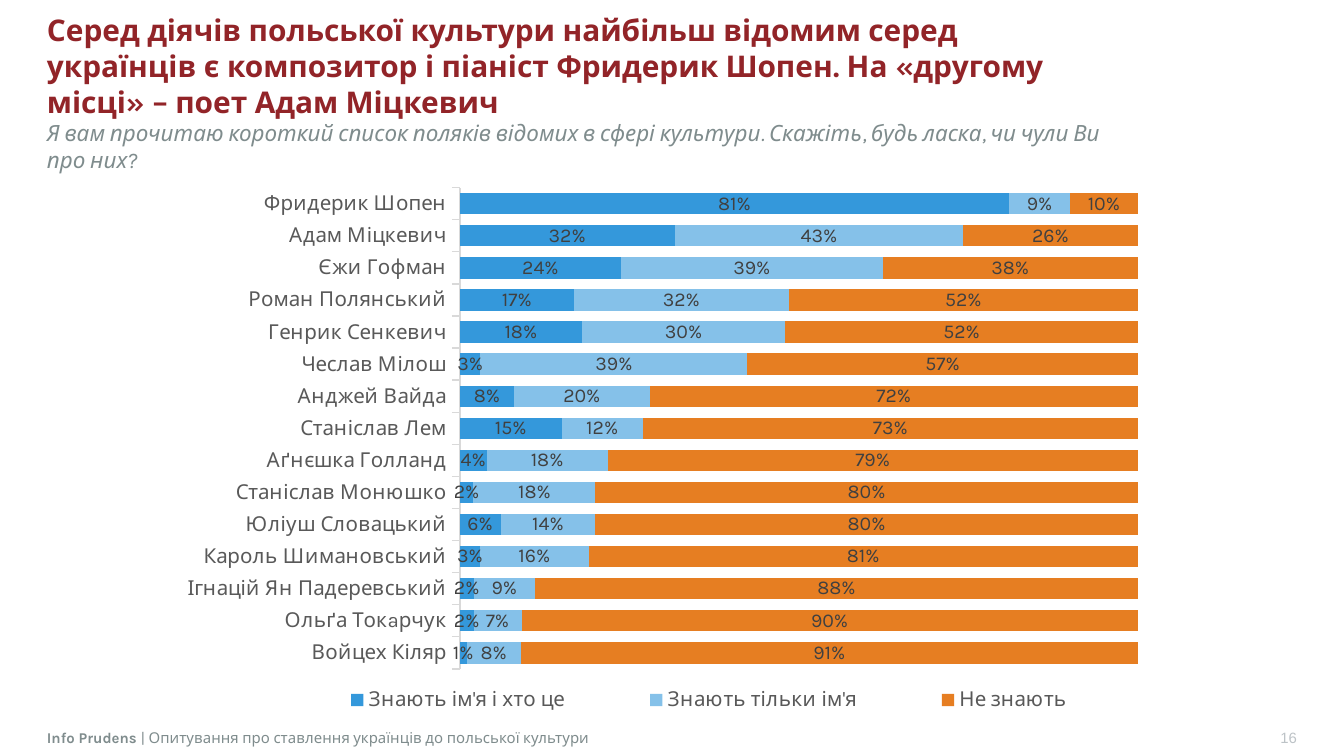
from dataclasses import dataclass

from lxml import etree
from pptx import Presentation
from pptx import util as u
from pptx.chart.data import CategoryChartData
from pptx.dml.color import RGBColor
from pptx.enum import chart as ch, shapes, text
from pptx.oxml.ns import qn


@dataclass(frozen=True)
class Theme:
    font: str = "Karla"
    number_font: str = "Arial"
    paper: str = "FFFFFF"
    heading: str = "922428"
    muted: str = "7F8C8D"
    page: str = "BDC3C7"
    axis_text: str = "595959"
    label_text: str = "404040"
    axis_line: str = "D9D9D9"
    series: tuple = ("3498DB", "85C1E9", "E67E22")
    heading_size: float = 16
    question_size: float = 12
    axis_size: float = 11
    label_size: float = 10.5
    footer_size: float = 8


SCALE = 914400 / 134.4


def px(n):
    return u.Emu(round(n * SCALE))


def style(font, size, color, name, bold=None, italic=None):
    font.size = u.Pt(size)
    font.color.rgb = RGBColor.from_string(color)
    font.name = name
    font.bold = bold
    font.italic = italic


def place(element, frame, box, target=None):
    layout = element.find(qn("c:layout"))
    if layout is None:
        layout = etree.Element(qn("c:layout"))
        before = element.find(qn("c:legendPos"))
        element.insert(0 if before is None else element.index(before) + 1, layout)
    for old in list(layout):
        layout.remove(old)
    x, y, w, h = frame
    left, top, width, height = box
    shares = ((left - x) / w, (top - y) / h, width / w, height / h)
    settings = [("layoutTarget", target)] if target else []
    settings += [("xMode", "edge"), ("yMode", "edge"), *zip("xywh", shares)]
    manual = etree.SubElement(layout, qn("c:manualLayout"))
    for tag, value in settings:
        etree.SubElement(manual, qn(f"c:{tag}")).set("val", str(value))


class Deck:
    def __init__(self, theme):
        self.theme = theme
        self.prs = Presentation()
        self.prs.slide_width, self.prs.slide_height = px(1344), px(756)
        self.s = self.prs.slides.add_slide(self.prs.slide_layouts[6])

    def first_paragraph(self, sp):
        tf = sp.text_frame
        tf.word_wrap = True
        tf.vertical_anchor = text.MSO_ANCHOR.MIDDLE
        tf.margin_left = tf.margin_right = tf.margin_top = tf.margin_bottom = 0
        return tf.paragraphs[0]

    def panel(self, *box):
        sp = self.s.shapes.add_shape(shapes.MSO_SHAPE.RECTANGLE, *map(px, box))
        sp.shadow.inherit = False
        sp.fill.solid()
        sp.fill.fore_color.rgb = RGBColor.from_string(self.theme.paper)
        sp.line.fill.background()
        return self.first_paragraph(sp)

    def run(self, p, words, *look, **flags):
        r = p.add_run()
        r.text = words
        style(r.font, *look, **flags)

    def title(self, heading, question):
        t = self.theme
        sp = self.s.shapes.add_textbox(*map(px, (47, 71, 1068, 43)))
        p = self.first_paragraph(sp)
        self.run(p, heading, t.heading_size, t.heading, t.font, bold=True)
        p.add_line_break()
        self.run(p, question, t.question_size, t.muted, t.font, italic=True)

    def footer(self, owner, topic, number):
        t = self.theme
        p = self.panel(1106, 727, 191, 22)
        p.text = number
        p.alignment = text.PP_ALIGN.RIGHT
        style(p.font, t.footer_size, t.page, t.number_font)
        p = self.panel(47, 727, 1037, 22)
        p.alignment = text.PP_ALIGN.LEFT
        self.run(p, owner, t.footer_size, t.muted, t.font, bold=True)
        self.run(p, topic, t.footer_size, t.muted, t.font)

    def stacked_bars(self, frame, plot_box, legend_box, names, rows):
        t = self.theme
        data = CategoryChartData(number_format="0%")
        data.categories = [row[0] for row in rows]
        for i, name in enumerate(names, 1):
            data.add_series(name, [row[i] / 100 for row in rows])
        chart = self.s.shapes.add_chart(
            ch.XL_CHART_TYPE.BAR_STACKED_100, *map(px, frame), data
        ).chart
        chart.has_title = False
        chart.font.name = t.font
        chart.has_legend = True
        chart.legend.position = ch.XL_LEGEND_POSITION.BOTTOM
        chart.legend.include_in_layout = False
        style(chart.legend.font, t.axis_size, t.axis_text, t.font)

        cat = chart.category_axis
        cat.reverse_order = True
        cat.has_major_gridlines = False
        cat.major_tick_mark = ch.XL_TICK_MARK.OUTSIDE
        cat.format.line.color.rgb = RGBColor.from_string(t.axis_line)
        cat.format.line.width = u.Pt(0.75)
        style(cat.tick_labels.font, t.axis_size, t.axis_text, t.font)
        val = chart.value_axis
        val.visible = False
        val.has_major_gridlines = False
        val.minimum_scale, val.maximum_scale = 0, 1

        plot = chart.plots[0]
        plot.gap_width, plot.overlap = 50, 100
        plot.vary_by_categories = False
        for series, color in zip(plot.series, t.series):
            series.format.fill.solid()
            series.format.fill.fore_color.rgb = RGBColor.from_string(color)
            labels = series.data_labels
            labels.show_value = True
            labels.position = ch.XL_LABEL_POSITION.CENTER
            labels.number_format = "0%"
            labels.number_format_is_linked = False
            style(labels.font, t.label_size, t.label_text, t.font)
        place(plot._element.getparent(), frame, plot_box, "inner")
        place(chart.legend._element, frame, legend_box)


LEVELS = ("Знають ім'я і хто це", "Знають тільки ім'я", "Не знають")
FIGURES = [
    ("Фридерик Шопен", 81, 9, 10),
    ("Адам Міцкевич", 32, 43, 26),
    ("Єжи Гофман", 24, 39, 38),
    ("Роман Полянський", 17, 32, 52),
    ("Генрик Сенкевич", 18, 30, 52),
    ("Чеслав Мілош", 3, 39, 57),
    ("Анджей Вайда", 8, 20, 72),
    ("Станіслав Лем", 15, 12, 73),
    ("Аґнєшка Голланд", 4, 18, 79),
    ("Станіслав Монюшко", 2, 18, 80),
    ("Юліуш Словацький", 6, 14, 80),
    ("Кароль Шимановський", 3, 16, 81),
    ("Ігнацій Ян Падеревський", 2, 9, 88),
    ("Ольґа Токaрчук", 2, 7, 90),
    ("Войцех Кіляр", 1, 8, 91),
]


def main():
    deck = Deck(Theme())
    deck.footer(
        "Info Prudens ",
        "| Опитування про ставлення українців до польської культури",
        "16",
    )
    deck.title(
        "Серед діячів польської культури найбільш відомим серед українців є "
        "композитор і піаніст Фридерик Шопен. На «другому місці» – поет Адам Міцкевич",
        "Я вам прочитаю короткий список поляків відомих в сфері культури. "
        "Скажіть, будь ласка, чи чули Ви про них?",
    )
    deck.stacked_bars(
        frame=(36, 187, 1270, 551),
        plot_box=(460, 187, 678, 482),
        legend_box=(273, 683, 872, 34),
        names=LEVELS,
        rows=FIGURES,
    )
    deck.prs.save("out.pptx")


if __name__ == "__main__":
    main()
